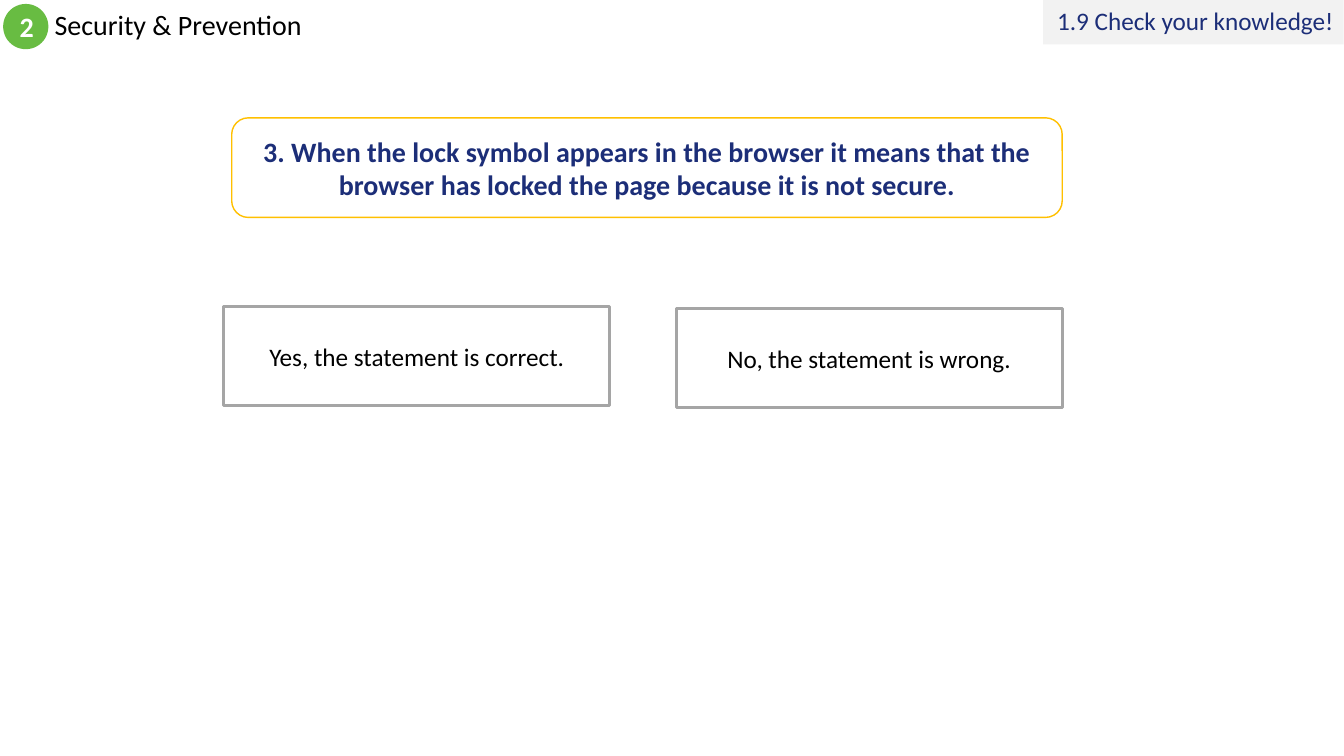
"""Build the knowledge-check slide on browser security."""
from dataclasses import dataclass
from typing import Optional

from pptx import Presentation
from pptx.dml.color import RGBColor
from pptx.enum.shapes import MSO_SHAPE
from pptx.enum.text import MSO_ANCHOR, MSO_AUTO_SIZE, PP_ALIGN
from pptx.slide import Slide
from pptx.text.text import TextFrame
from pptx.util import Cm, Pt

RECT, ROUND, OVAL = MSO_SHAPE.RECTANGLE, MSO_SHAPE.ROUNDED_RECTANGLE, MSO_SHAPE.OVAL
LEFT, CENTER, RIGHT = PP_ALIGN.LEFT, PP_ALIGN.CENTER, PP_ALIGN.RIGHT
MIDDLE = MSO_ANCHOR.MIDDLE
NO_FIT = MSO_AUTO_SIZE.NONE
TITLE_ONLY = 5


@dataclass(frozen=True)
class Theme:
    font: str = "Calibri"
    large: int = 20
    body: int = 18
    black: str = "000000"
    white: str = "FFFFFF"
    navy: str = "1C2E78"
    green: str = "68BC42"
    amber: str = "FFC000"
    grey: str = "A5A5A5"
    pale: str = "F2F2F2"


THEME = Theme()


@dataclass(frozen=True)
class TextStyle:
    size: int
    color: str
    bold: bool = False
    align: PP_ALIGN = CENTER
    spacing: float = 1.0


@dataclass(frozen=True)
class Box:
    text: str
    left: float
    top: float
    width: float
    height: float
    style: TextStyle
    kind: MSO_SHAPE = RECT
    fill: str = THEME.white
    line: Optional[str] = None
    weight: float = 1


TITLE = TextStyle(THEME.large, THEME.black, align=LEFT, spacing=0.9)
NUMBER = TextStyle(THEME.large, THEME.white, bold=True)
QUESTION = TextStyle(THEME.large, THEME.navy, bold=True)
TAG = TextStyle(THEME.body, THEME.navy, align=RIGHT, spacing=0.9)
ANSWER = TextStyle(THEME.body, THEME.black)


def answer(text: str, left: float, top: float) -> Box:
    return Box(text, left, top, 9.73, 2.51, ANSWER, line=THEME.grey, weight=2)


BOXES = (
    Box("2", 0.08, 0.1, 1.14, 1.14, NUMBER, OVAL, THEME.green),
    Box("3. When the lock symbol appears in the browser it means that the "
        "browser has locked the page because it is not secure.",
        5.84, 2.97, 20.93, 2.51, QUESTION, ROUND, line=THEME.amber),
    Box("1.9 Check your knowledge!", 26.29, 0, 7.57, 1.12, TAG, fill=THEME.pale),
    answer("No, the statement is wrong.", 17.04, 7.77),
    answer("Yes, the statement is correct.", 5.64, 7.72),
)


def write(tf: TextFrame, text: str, style: TextStyle) -> None:
    tf.word_wrap = True
    tf.auto_size = NO_FIT
    tf.vertical_anchor = MIDDLE
    p = tf.paragraphs[0]
    p.alignment = style.align
    p.line_spacing = style.spacing
    r = p.add_run()
    r.text = text
    r.font.name = THEME.font
    r.font.size = Pt(style.size)
    r.font.bold = style.bold
    r.font.color.rgb = RGBColor.from_string(style.color)


def add_title(s: Slide, text: str) -> None:
    sp = s.shapes.title
    sp.left, sp.top, sp.width, sp.height = Cm(1.12), Cm(0.1), Cm(20.32), Cm(1.14)
    write(sp.text_frame, text, TITLE)


def add_box(s: Slide, box: Box) -> None:
    sp = s.shapes.add_shape(box.kind, Cm(box.left), Cm(box.top),
                            Cm(box.width), Cm(box.height))
    sp.shadow.inherit = False
    sp.fill.solid()
    sp.fill.fore_color.rgb = RGBColor.from_string(box.fill)
    if box.line:
        sp.line.color.rgb = RGBColor.from_string(box.line)
        sp.line.width = Pt(box.weight)
    else:
        sp.line.fill.background()
    write(sp.text_frame, box.text, box.style)


def main() -> None:
    prs = Presentation()
    prs.slide_width, prs.slide_height = Cm(33.87), Cm(19.05)
    s = prs.slides.add_slide(prs.slide_layouts[TITLE_ONLY])
    add_title(s, "Security & Prevention")
    for box in BOXES:
        add_box(s, box)
    prs.save("out.pptx")


if __name__ == "__main__":
    main()
